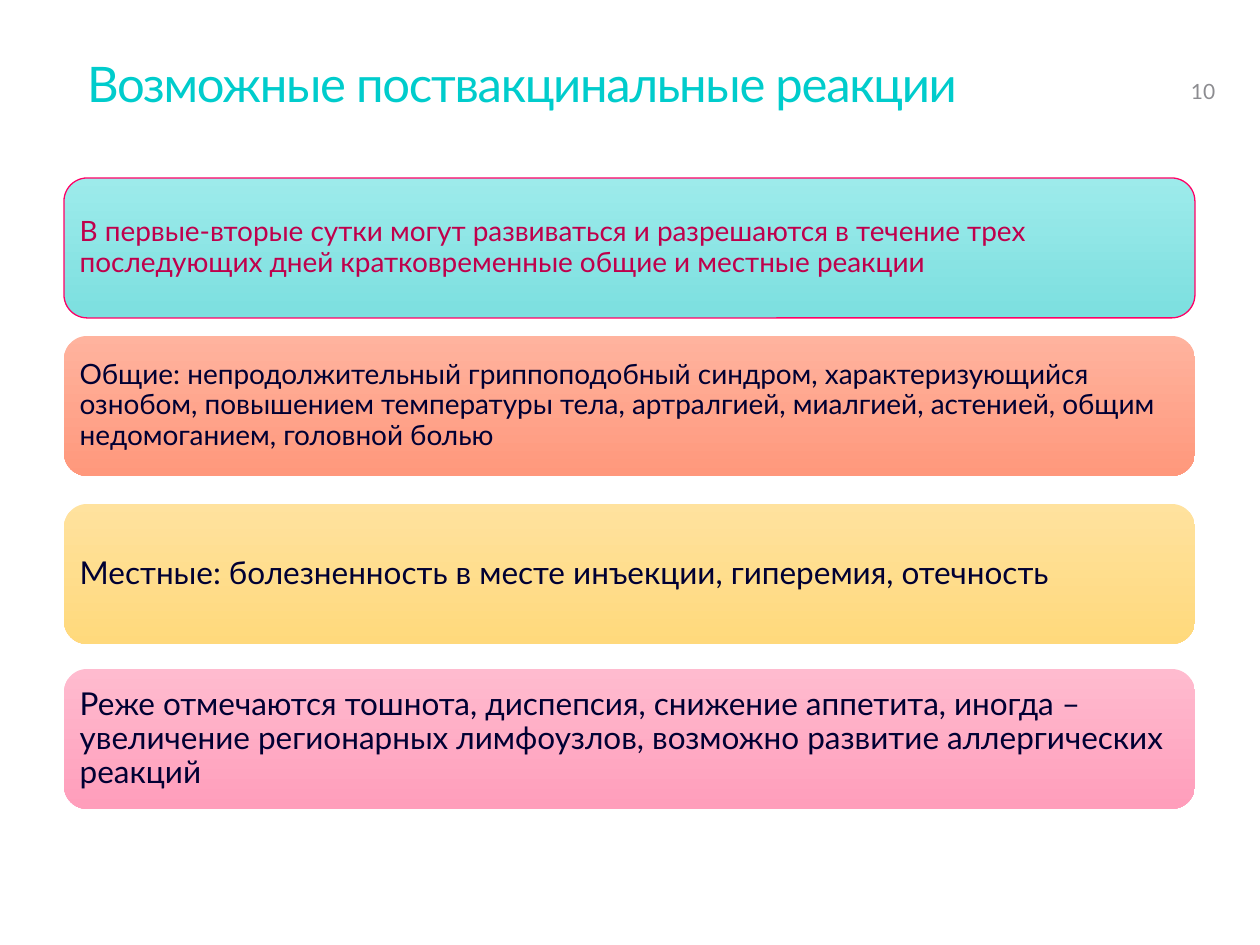
"""Build a slide listing possible post-vaccination reactions."""
from pptx import Presentation
from pptx import util as u
from pptx.dml.color import RGBColor
from pptx.enum import shapes, text

TITLE = "Возможные поствакцинальные реакции"
NUMBER = "10"
CARDS = [
    dict(top=178, size=16, fill=("9DEBEB", "7CDFDF"), color="BF004C", line="FF0066",
         text="В первые-вторые сутки могут развиваться и разрешаются в течение трех "
              "последующих дней кратковременные общие и местные реакции"),
    dict(top=336, size=16, fill=("FFB39E", "FF987C"),
         text="Общие: непродолжительный гриппоподобный синдром, характеризующийся "
              "ознобом, повышением температуры тела, артралгией, миалгией, астенией, "
              "общим недомоганием, головной болью"),
    dict(top=504, size=18, fill=("FFE29E", "FFD97C"),
         text="Местные: болезненность в месте инъекции, гиперемия, отечность"),
    dict(top=669, size=18, fill=("FFBBCF", "FF9EBB"),
         text="Реже отмечаются тошнота, диспепсия, снижение аппетита, иногда – "
              "увеличение регионарных лимфоузлов, возможно развитие аллергических "
              "реакций"),
]
THEME = dict(font="Lato", title="00CCCC", number="8C8C90", ink="000033",
             title_size=28, number_size=12)
CARD_LEFT, CARD_WIDTH, CARD_HEIGHT = 64, 1131, 140
PX = u.Inches(1) / 126


def px(n):
    """Turn pixels into EMU."""
    return u.Emu(round(n * PX))


def place(sp, left, top, width, height):
    """Set the box of a shape in pixels."""
    sp.left, sp.top, sp.width, sp.height = map(px, (left, top, width, height))


def write(sp, words, size, color, anchor, inset=(0, 0), spacing=None, wrap=True, track=None):
    """Fill a shape with one left-aligned, formatted paragraph."""
    tf = sp.text_frame
    tf.auto_size = text.MSO_AUTO_SIZE.NONE
    tf.word_wrap = wrap
    tf.vertical_anchor = anchor
    tf.margin_left = tf.margin_right = px(inset[0])
    tf.margin_top = tf.margin_bottom = px(inset[1])
    p = tf.paragraphs[0]
    p.alignment = text.PP_ALIGN.LEFT
    p.line_spacing = spacing
    r = p.add_run()
    r.text = words
    r.font.name = THEME["font"]
    r.font.size = u.Pt(size)
    r.font.color.rgb = RGBColor.from_string(color)
    if track is not None:
        r.font._element.set("spc", str(track))


def add_card(s, card):
    """Add a rounded card with a vertical gradient."""
    sp = s.shapes.add_shape(shapes.MSO_SHAPE.ROUNDED_RECTANGLE, 0, 0, 0, 0)
    place(sp, CARD_LEFT, card["top"], CARD_WIDTH, CARD_HEIGHT)
    sp.shadow.inherit = False
    sp.fill.gradient()
    sp.fill.gradient_angle = 270
    for stop, color in zip(sp.fill.gradient_stops, card["fill"]):
        stop.color.rgb = RGBColor.from_string(color)
    if "line" in card:
        sp.line.color.rgb = RGBColor.from_string(card["line"])
        sp.line.width = u.Pt(0.75)
    else:
        sp.line.fill.background()
    write(sp, card["text"], card["size"], card.get("color", THEME["ink"]),
          text.MSO_ANCHOR.MIDDLE, inset=(9, 9), spacing=0.9)


def main():
    """Assemble and save the slide."""
    prs = Presentation()
    prs.slide_width, prs.slide_height = px(1260), px(945)
    s = prs.slides.add_slide(prs.slide_layouts[5])
    title = s.shapes.title
    place(title, 87, 50, 1086, 130)
    write(title, TITLE, THEME["title_size"], THEME["title"], text.MSO_ANCHOR.TOP,
          inset=(0, 6), spacing=u.Pt(32), track=-70)
    number = s.shapes.add_textbox(0, 0, 0, 0)
    place(number, 1191, 50, 48, 59)
    write(number, NUMBER, THEME["number_size"], THEME["number"], text.MSO_ANCHOR.BOTTOM,
          inset=(0, 5))
    for card in CARDS:
        add_card(s, card)
    prs.save("out.pptx")


if __name__ == "__main__":
    main()
